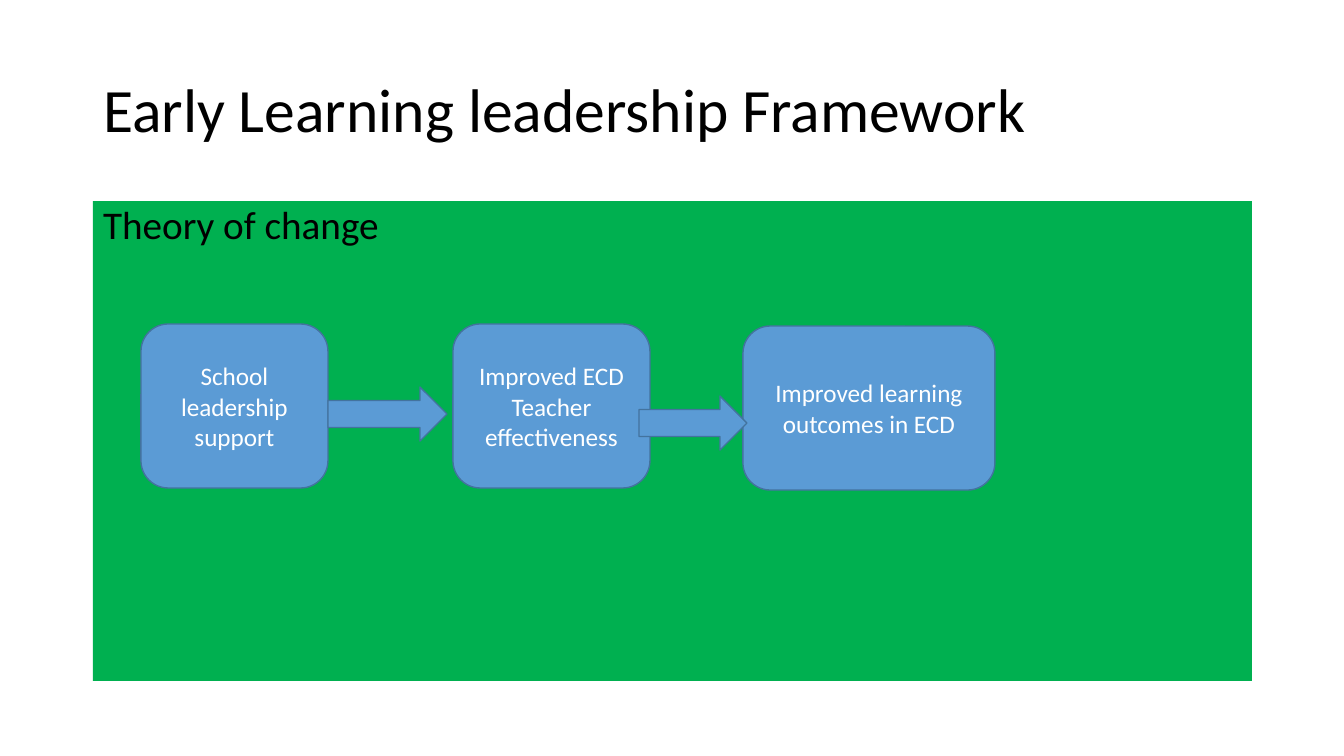
from dataclasses import dataclass

from lxml.etree import SubElement
from pptx import Presentation
from pptx.dml.color import RGBColor
from pptx.enum.shapes import MSO_SHAPE as Shape
from pptx.enum.text import MSO_ANCHOR as Anchor, MSO_AUTO_SIZE as AutoSize, PP_ALIGN as Align
from pptx.oxml.ns import qn
from pptx.util import Pt

EMU_PER_PX = 914400 / 100.8


@dataclass(frozen=True)
class Theme:
    """Colours, type sizes and font of the slide."""
    font: str = "Calibri"
    ink: str = "000000"
    panel: str = "00B050"
    step: str = "5B9BD5"
    outline: str = "43739E"
    step_ink: str = "FFFFFF"
    title_size: int = 44
    body_size: int = 28
    step_size: int = 18


THEME = Theme()
STEPS = [
    (Shape.FLOWCHART_ALTERNATE_PROCESS, (48, 123, 187, 164), "School leadership support"),
    (Shape.ROUNDED_RECTANGLE, (360, 123, 197, 164), "Improved ECD Teacher effectiveness"),
    (Shape.ROUNDED_RECTANGLE, (650, 125, 252, 164), "Improved learning outcomes in ECD"),
]
ARROWS = [(235, 186, 119, 54), (546, 195, 108, 54)]


def px(length):
    """Turn pixels into EMU."""
    return round(length * EMU_PER_PX)


def move(placeholder, box):
    """Place a placeholder in a pixel box."""
    placeholder.left, placeholder.top, placeholder.width, placeholder.height = map(px, box)


def write(frame, wording, size, colour, align, anchor):
    """Fill a text frame with one formatted paragraph and return it."""
    frame.text = wording
    frame.word_wrap = True
    frame.auto_size = AutoSize.NONE
    frame.vertical_anchor = anchor
    paragraph = frame.paragraphs[0]
    paragraph.alignment = align
    paragraph.font.name = THEME.font
    paragraph.font.size = Pt(size)
    paragraph.font.color.rgb = RGBColor.from_string(colour)
    return paragraph


def add_block(slide, kind, box, origin):
    """Add an outlined blue shape at a box relative to the origin."""
    left, top, width, height = box
    block = slide.shapes.add_shape(
        kind, px(origin[0] + left), px(origin[1] + top), px(width), px(height))
    block.shadow.inherit = False
    block.fill.solid()
    block.fill.fore_color.rgb = RGBColor.from_string(THEME.step)
    block.line.color.rgb = RGBColor.from_string(THEME.outline)
    block.line.width = Pt(1)
    return block


def build_title(slide, box):
    """Set the slide title."""
    title = slide.shapes.title
    move(title, box)
    write(title.text_frame, "Early Learning leadership Framework", THEME.title_size,
          THEME.ink, Align.LEFT, Anchor.MIDDLE).line_spacing = 0.9


def build_panel(slide, box):
    """Set the green panel with its heading."""
    panel = slide.placeholders[1]
    move(panel, box)
    panel.fill.solid()
    panel.fill.fore_color.rgb = RGBColor.from_string(THEME.panel)
    heading = write(panel.text_frame, "Theory of change", THEME.body_size,
                    THEME.ink, Align.LEFT, Anchor.TOP)
    heading.line_spacing = 0.9
    heading.space_before = Pt(10)
    properties = heading._p.get_or_add_pPr()
    properties.set("marL", "0")
    properties.set("indent", "0")
    SubElement(properties, qn("a:buNone"))


def build_chain(slide, box):
    """Draw the steps and the arrows between them inside the panel."""
    for kind, place, wording in STEPS:
        step = add_block(slide, kind, place, box)
        write(step.text_frame, wording, THEME.step_size, THEME.step_ink,
              Align.CENTER, Anchor.MIDDLE)
    for place in ARROWS:
        add_block(slide, Shape.RIGHT_ARROW, place, box)


def main():
    """Build and save the slide."""
    deck = Presentation()
    deck.slide_width, deck.slide_height = px(1344), px(756)
    slide = deck.slides.add_slide(deck.slide_layouts[1])
    panel_box = (93, 201, 1159, 480)
    build_title(slide, (93, 40, 1159, 146))
    build_panel(slide, panel_box)
    build_chain(slide, panel_box)
    deck.save("out.pptx")


if __name__ == "__main__":
    main()
